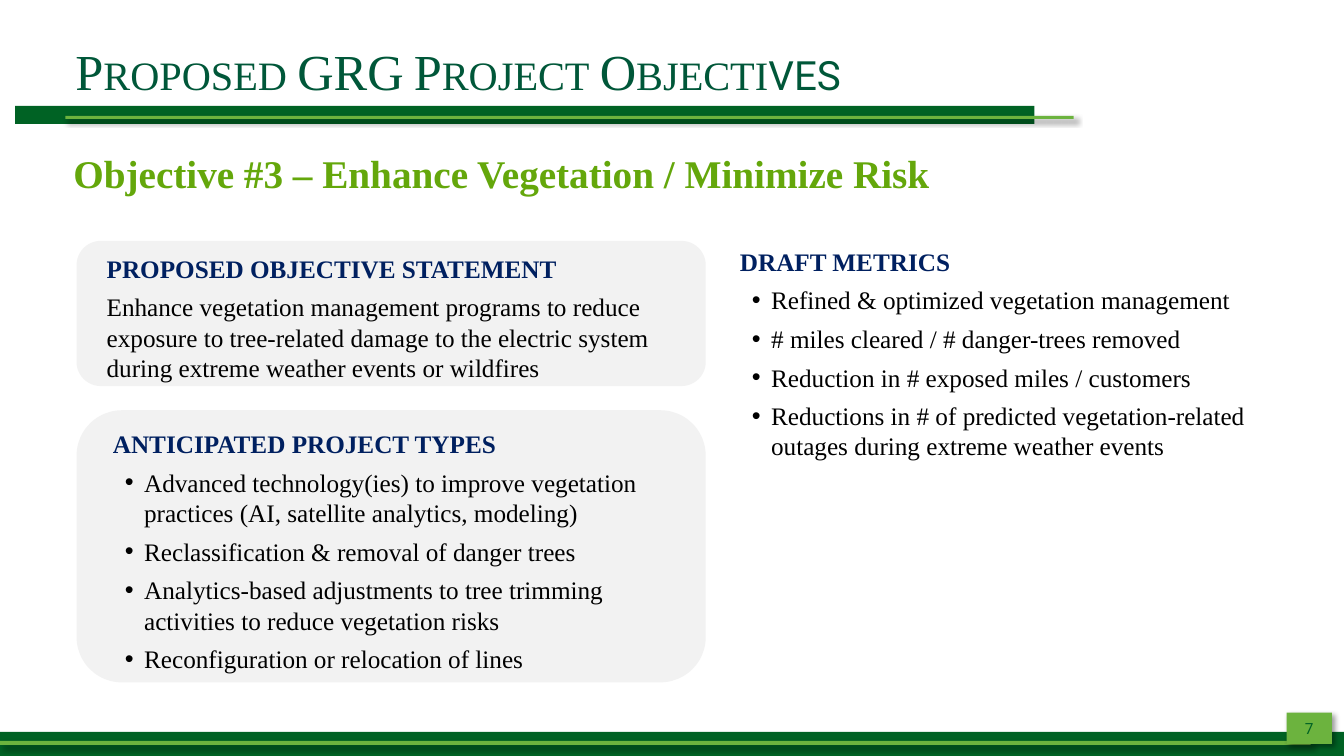
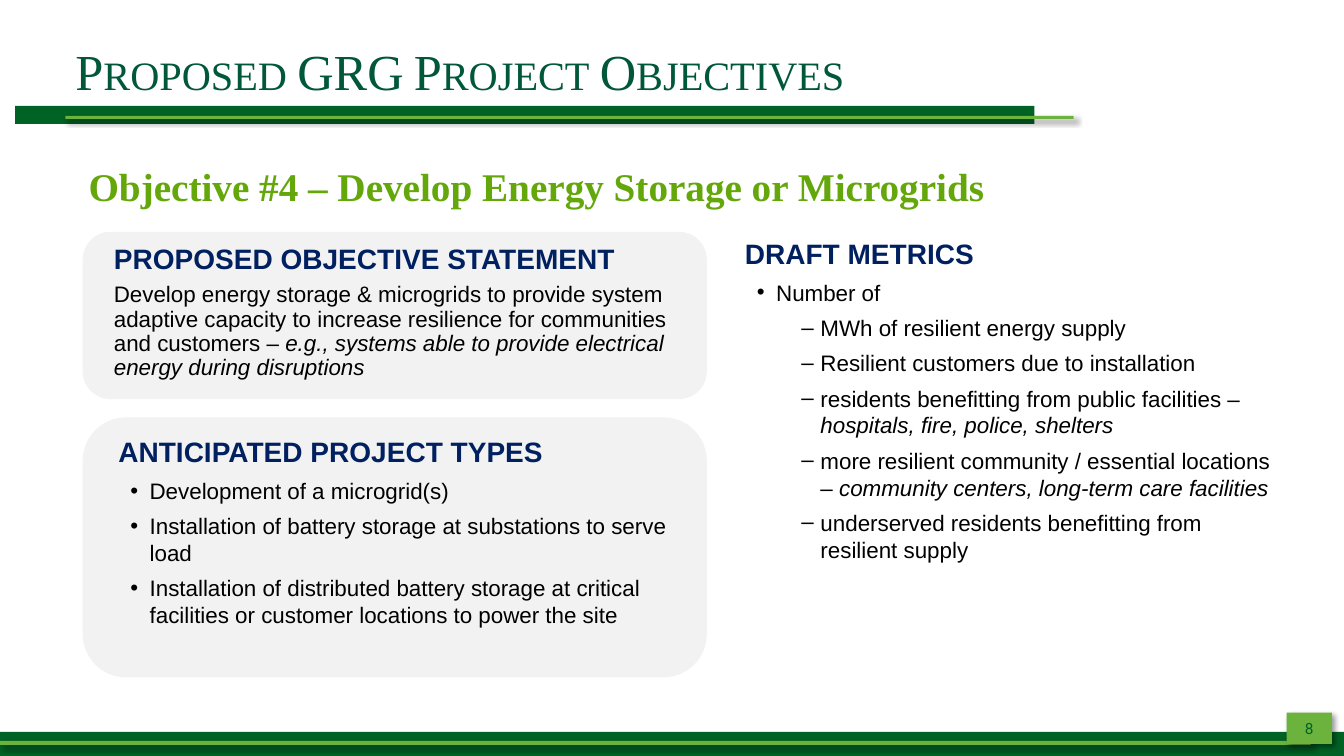
from lxml.etree import SubElement
from pptx import Presentation
from pptx.dml.color import RGBColor
from pptx.enum.shapes import MSO_SHAPE as Shape
from pptx.enum.text import MSO_ANCHOR as Anchor, MSO_AUTO_SIZE as AutoSize, PP_ALIGN as Align
from pptx.oxml.ns import qn
from pptx.util import Inches, Pt

COLORS = {
    "dark": "006224", "light": "6CB33E", "title": "005739", "objective": "64A70B",
    "heading": "002060", "body": "000000", "panel": "F2F2F2",
}
SERIF, SANS, ACCENT = "Times New Roman", "Arial", "Roboto"

# Left margin, hanging indent (inches) and bullet of each paragraph kind
LEVELS = {
    "heading": (0.13, 0, None),
    "plain": (0.13, 0, None),
    "bullet": (0.44, -0.19, "•"),
    "dash": (0.88, -0.19, "–"),
}


class Deck:
    def __init__(self):
        self.presentation = Presentation()
        self.presentation.slide_width = Inches(13.33)
        self.presentation.slide_height = Inches(7.5)
        self.slide = None
        self.font, self.heading_size, self.body_size = SERIF, 18, 18

    def new_slide(self, number, title_runs, font, heading_size, body_size):
        self.slide = self.presentation.slides.add_slide(self.presentation.slide_layouts[6])
        self.font, self.heading_size, self.body_size = font, heading_size, body_size
        # Footer and title bands
        self.shape((0, 7.26, 13.33, 0.24), "dark")
        self.shape((0.15, 1.05, 10.11, 0.18), "dark")
        self.shape((0.65, 1.15, 10, 0.03), "light", shadow=True)
        self.shape((0, 7.35, 13, 0.04), "light", shadow=True)
        # Page number
        badge = self.shape((12.76, 7.07, 0.45, 0.31), "light", shadow=True)
        badge.text_frame.vertical_anchor = Anchor.MIDDLE
        paragraph = badge.text_frame.paragraphs[0]
        paragraph.alignment = Align.CENTER
        self.run(paragraph, str(number), "dark", name=ACCENT, size=Pt(11))
        # Title
        frame = self.text_box((0.65, 0.18, 8.63, 1.12))
        frame.vertical_anchor = Anchor.MIDDLE
        paragraph = frame.paragraphs[0]
        paragraph.line_spacing = 0.9
        for text, name in title_runs:
            run = self.run(paragraph, text, "title", name=name, size=Pt(36))
            run.font._element.set("cap", "small")

    def shape(self, box, color, kind=Shape.RECTANGLE, shadow=False):
        shape = self.slide.shapes.add_shape(kind, *map(Inches, box))
        shape.shadow.inherit = False
        shape.fill.solid()
        shape.fill.fore_color.rgb = RGBColor.from_string(COLORS[color])
        shape.line.fill.background()
        if shadow:
            effects = shape._element.spPr.find(qn("a:effectLst"))
            outer = SubElement(effects, qn("a:outerShdw"), blurRad=str(Pt(4)),
                               dist=str(Pt(3)), dir=str(45 * 60000))
            shade = SubElement(outer, qn("a:srgbClr"), val="000000")
            SubElement(shade, qn("a:alpha"), val="40000")
        return shape

    def text_box(self, box):
        frame = self.slide.shapes.add_textbox(*map(Inches, box)).text_frame
        frame.word_wrap = True
        return frame

    def run(self, paragraph, text, color, **formats):
        run = paragraph.add_run()
        run.text = text
        for name, value in formats.items():
            setattr(run.font, name, value)
        run.font.color.rgb = RGBColor.from_string(COLORS[color])
        return run

    def paragraph(self, frame, kind, first=False, line_spacing=None):
        paragraph = frame.paragraphs[0] if first else frame.add_paragraph()
        margin, indent, bullet = LEVELS[kind]
        properties = paragraph._p.get_or_add_pPr()
        properties.set("marL", str(Inches(margin)))
        properties.set("indent", str(Inches(indent)))
        if bullet:
            SubElement(properties, qn("a:buFont"), typeface="Arial")
            SubElement(properties, qn("a:buChar"), char=bullet)
        formats = {"alignment": Align.LEFT, "space_before": Pt(0), "space_after": Pt(6),
                   "line_spacing": line_spacing}
        for name, value in formats.items():
            setattr(paragraph, name, value)
        return paragraph

    def objective(self, box, text):
        frame = self.text_box(box)
        frame.auto_size = AutoSize.SHAPE_TO_FIT_TEXT
        paragraph = self.paragraph(frame, "heading", first=True)
        self.run(paragraph, text, "objective", name=SERIF, size=Pt(28), bold=True)

    def section(self, box, heading, items, panel=True, line_spacing=None):
        """Heading and items; each item is (kind, text) or (kind, text, italic text)."""
        if panel:
            frame = self.shape(box, "panel", Shape.ROUNDED_RECTANGLE).text_frame
            frame.word_wrap = True
            frame.vertical_anchor = Anchor.TOP
        else:
            frame = self.text_box(box)
        paragraph = self.paragraph(frame, "heading", True, line_spacing)
        self.run(paragraph, heading, "heading", name=self.font,
                 size=Pt(self.heading_size), bold=True)
        for kind, *texts in items:
            paragraph = self.paragraph(frame, kind, line_spacing=line_spacing)
            for text, italic in zip(texts, (False, True)):
                self.run(paragraph, text, "body", name=self.font,
                         size=Pt(self.body_size), italic=italic)


def vegetation_slide(deck):
    deck.new_slide(7, [("Proposed GRG Project Objecti", SERIF), ("ves", ACCENT)], SERIF, 18, 18)
    deck.section((7.11, 2.39, 5.59, 4.64), "DRAFT METRICS", [
        ("bullet", "Refined & optimized vegetation management"),
        ("bullet", "# miles cleared / # danger-trees removed"),
        ("bullet", "Reduction in # exposed miles / customers"),
        ("bullet", "Reductions in # of predicted vegetation-related outages "
                   "during extreme weather events"),
    ], panel=False)
    deck.section((0.76, 2.39, 6.24, 1.44), "PROPOSED OBJECTIVE STATEMENT", [
        ("plain", "Enhance vegetation management programs to reduce exposure to tree-related "
                  "damage to the electric system during extreme weather events or wildfires"),
    ])
    deck.section((0.76, 4.07, 6.24, 2.7), "ANTICIPATED PROJECT TYPES", [
        ("bullet", "Advanced technology(ies) to improve vegetation practices "
                   "(AI, satellite analytics, modeling)"),
        ("bullet", "Reclassification & removal of danger trees"),
        ("bullet", "Analytics-based adjustments to tree trimming activities "
                   "to reduce vegetation risks"),
        ("bullet", "Reconfiguration or relocation of lines"),
    ])
    deck.objective((0.5, 1.43, 12.2, 0.57), "Objective #3 – Enhance Vegetation / Minimize Risk")


def storage_slide(deck):
    deck.new_slide(8, [("Proposed GRG Project Objectives", SERIF)], SANS, 20, 16)
    deck.section((7.16, 2.3, 5.54, 4.74), "DRAFT METRICS", [
        ("bullet", "Number of"),
        ("dash", "MWh of resilient energy supply"),
        ("dash", "Resilient customers due to installation"),
        ("dash", "residents benefitting from public facilities – ",
         "hospitals, fire, police, shelters"),
        ("dash", "more resilient community / essential locations – ",
         "community centers, long-term care facilities"),
        ("dash", "underserved residents benefitting from resilient supply"),
    ], panel=False)
    deck.section((0.82, 2.3, 6.19, 1.66), "PROPOSED OBJECTIVE STATEMENT", [
        ("plain", "Develop energy storage & microgrids to provide system adaptive capacity "
                  "to increase resilience for communities and customers – ",
         "e.g., systems able to provide electrical energy during disruptions"),
    ], line_spacing=0.9)
    deck.section((0.82, 4.14, 6.19, 2.58), "ANTICIPATED PROJECT TYPES", [
        ("bullet", "Development of a microgrid(s)"),
        ("bullet", "Installation of battery storage at substations to serve load"),
        ("bullet", "Installation of distributed battery storage at critical facilities "
                   "or customer locations to power the site"),
    ])
    deck.objective((0.65, 1.56, 12.05, 0.57),
                   "Objective #4 – Develop Energy Storage or Microgrids")


def main():
    deck = Deck()
    vegetation_slide(deck)
    storage_slide(deck)
    deck.presentation.save("out.pptx")


if __name__ == "__main__":
    main()
